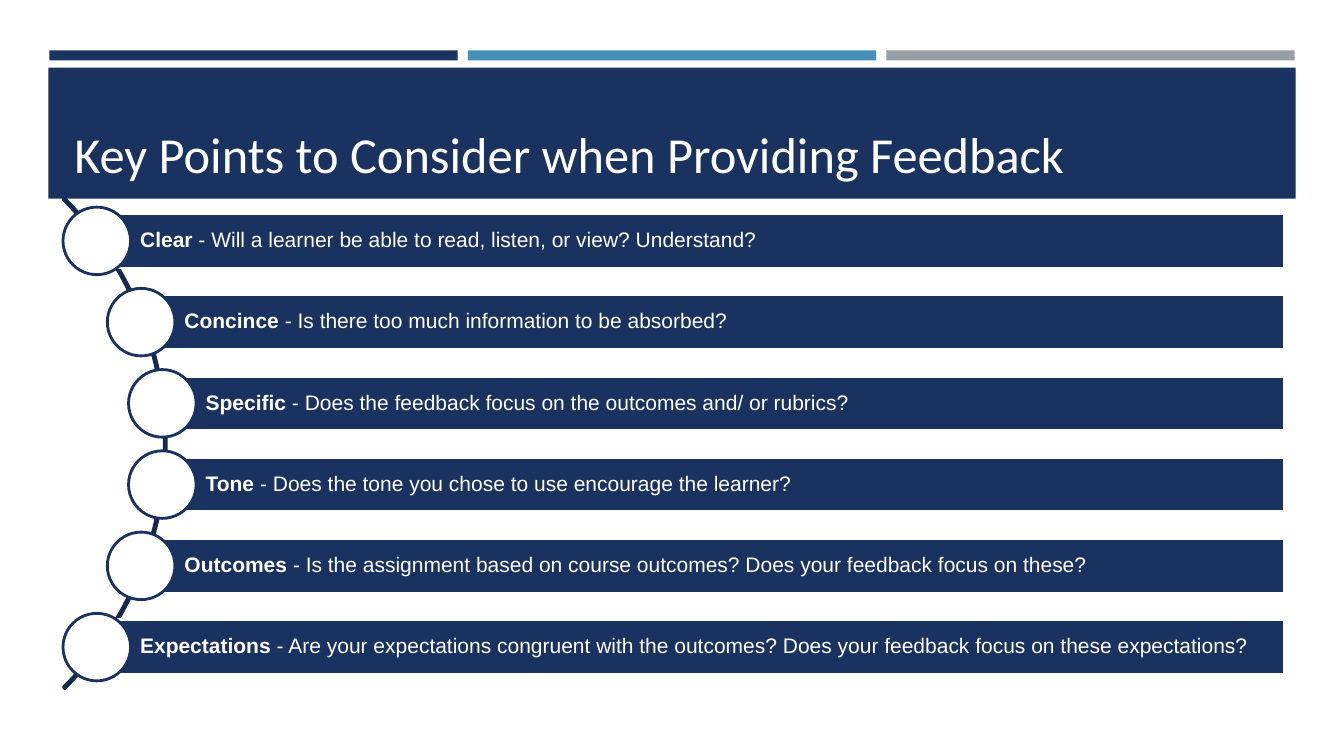
import pptx
import pptx.util
import pptx.dml.color
import pptx.enum.shapes
import pptx.enum.text

Inches = pptx.util.Inches
Pt = pptx.util.Pt
RGBColor = pptx.dml.color.RGBColor
KIND = pptx.enum.shapes.MSO_SHAPE
ANCHOR = pptx.enum.text.MSO_ANCHOR
ALIGN = pptx.enum.text.PP_ALIGN

NAVY = RGBColor(0x1A, 0x32, 0x60)
DARK = RGBColor(0x15, 0x28, 0x4D)
BLUE = RGBColor(0x45, 0x90, 0xB8)
GRAY = RGBColor(0x96, 0x9F, 0xA7)
WHITE = RGBColor(0xFF, 0xFF, 0xFF)

deck = pptx.Presentation()
deck.slide_width = Inches(13.33)
deck.slide_height = Inches(7.5)
slide = deck.slides.add_slide(deck.slide_layouts[6])


def add_shape(kind, left, top, width, height, fill=None, line=None):
    """Add a flat shape; without a colour, fill or line is left out."""
    shape = slide.shapes.add_shape(
        kind, Inches(left), Inches(top), Inches(width), Inches(height))
    shape.shadow.inherit = False
    if fill is None:
        shape.fill.background()
    else:
        shape.fill.solid()
        shape.fill.fore_color.rgb = fill
    if line is None:
        shape.line.fill.background()
    else:
        shape.line.color.rgb = line
        shape.line.width = Pt(2)
    return shape


def add_text(shape, runs, font, size, anchor, insets):
    """Write (text, bold) runs in white, left-aligned."""
    frame = shape.text_frame
    frame.word_wrap = True
    frame.vertical_anchor = anchor
    (frame.margin_left, frame.margin_top,
     frame.margin_right, frame.margin_bottom) = map(Inches, insets)
    para = frame.paragraphs[0]
    para.alignment = ALIGN.LEFT
    para.line_spacing = 0.9
    for text, bold in runs:
        run = para.add_run()
        run.text = text
        run.font.name = font
        run.font.size = Pt(size)
        run.font.bold = bold
        run.font.color.rgb = WHITE


# Header
for i, color in enumerate((NAVY, BLUE, GRAY)):
    add_shape(KIND.RECTANGLE, 0.49 + 4.15 * i, 0.5, 4.05, 0.1, color)
add_shape(KIND.RECTANGLE, 0.48, 0.67, 12.37, 1.3, NAVY)
title = slide.shapes.add_textbox(
    Inches(0.64), Inches(0.77), Inches(12.06), Inches(1.11))
add_text(title, [("Key Points to Consider when Providing Feedback", False)],
         "Calibri", 36, ANCHOR.BOTTOM, (0.1, 0.05, 0.1, 0.05))

# Arc behind the points, from 315 to 45 degrees
arc = add_shape(KIND.BLOCK_ARC, -5.23, 0.96, 6.88, 6.88, line=DARK)
for i, value in enumerate((189, 27, 0.003)):
    arc.adjustments[i] = value

# Points
POINTS = [
    (0.96, "Clear", " - Will a learner be able to read, listen, or view? Understand?"),
    (1.4, "Concince", " - Is there too much information to be absorbed?"),
    (1.61, "Specific", " - Does the feedback focus on the outcomes and/ or rubrics?"),
    (1.61, "Tone", " - Does the tone you chose to use encourage the learner?"),
    (1.4, "Outcomes", " - Is the assignment based on course outcomes? "
     "Does your feedback focus on these?"),
    (0.96, "Expectations", " - Are your expectations congruent with the outcomes? "
     "Does your feedback focus on these expectations?"),
]
RIGHT = 12.74
FIRST, LAST = 2.12, 6.15
BAR, DOT = 0.54, 0.67
step = (LAST - FIRST) / (len(POINTS) - 1)

for i, (left, head, rest) in enumerate(POINTS):
    top = FIRST + step * i
    bar = add_shape(KIND.RECTANGLE, left, top, RIGHT - left, BAR, NAVY, WHITE)
    add_text(bar, [(head, True), (rest, False)], "Arial", 15,
             ANCHOR.MIDDLE, (0.43, 0.04, 0.04, 0.04))
    add_shape(KIND.OVAL, left - DOT / 2, top + (BAR - DOT) / 2,
              DOT, DOT, WHITE, NAVY)

deck.save("out.pptx")
